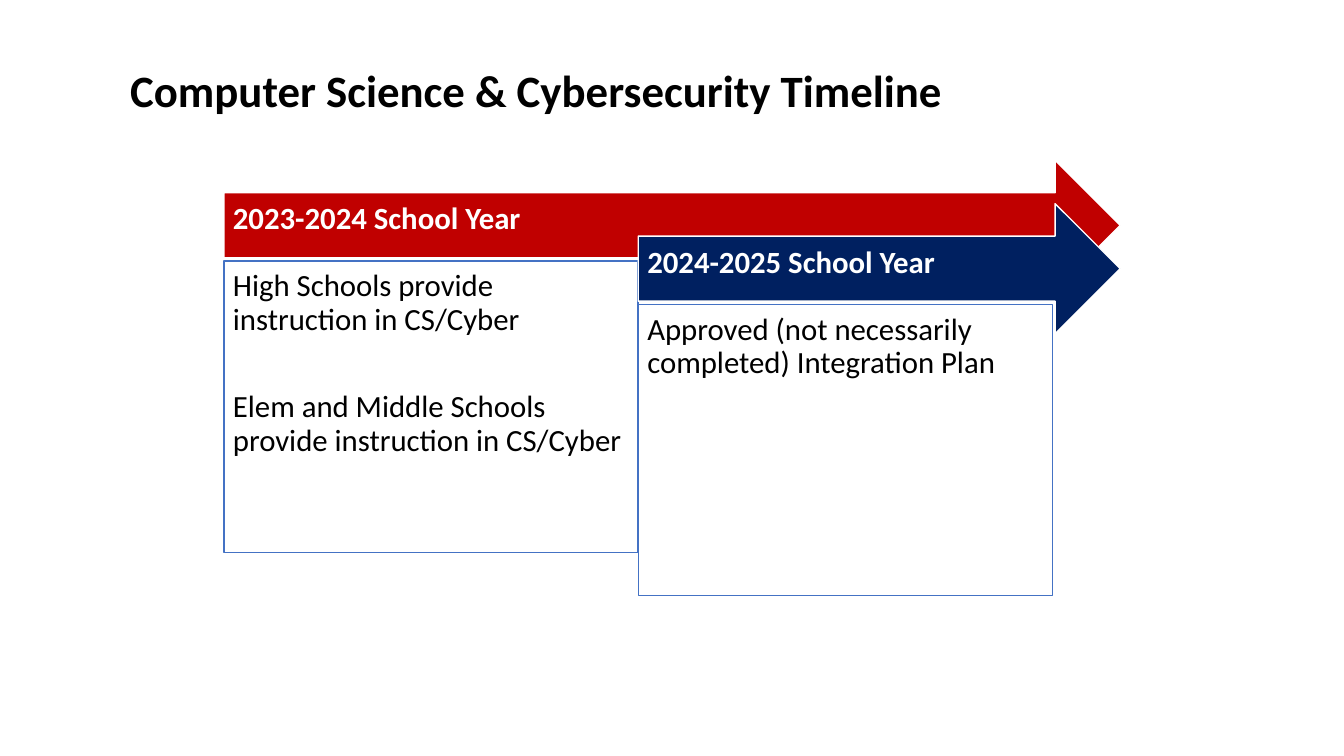
from pptx import Presentation
from pptx.dml.color import RGBColor
from pptx.enum.shapes import MSO_SHAPE
from pptx.enum.text import MSO_ANCHOR, MSO_AUTO_SIZE, PP_ALIGN
from pptx.util import Pt

BLACK = RGBColor(0x00, 0x00, 0x00)
WHITE = RGBColor(0xFF, 0xFF, 0xFF)
RED = RGBColor(0xC0, 0x00, 0x00)
NAVY = RGBColor(0x00, 0x20, 0x60)
BLUE = RGBColor(0x44, 0x72, 0xC4)

TITLE = "Computer Science & Cybersecurity Timeline"
YEARS = [
    ("2023-2024 School Year", RED,
     ["High Schools provide instruction in CS/Cyber",
      "Elem and Middle Schools provide instruction in CS/Cyber"]),
    ("2024-2025 School Year", NAVY,
     ["Approved (not necessarily completed) Integration Plan"]),
]

PX = 9144  # 100 px to the inch
LEFT, TOP, ARROW_TIP = 222, 159, 1111
STEP_X, STEP_Y = 411, 43
ARROW_HEIGHT = 129
BODY_DROP, BODY_HEIGHT = 100, 289


def write(shape, paragraphs, size=22, color=BLACK, bold=False, align=PP_ALIGN.LEFT,
          anchor=MSO_ANCHOR.TOP, insets=(9, 9, 9, 9), gap=39):
    """Fill a shape with text; insets are left, top, right, bottom in px."""
    frame = shape.text_frame
    frame.word_wrap = True
    frame.auto_size = MSO_AUTO_SIZE.NONE
    frame.vertical_anchor = anchor
    (frame.margin_left, frame.margin_top,
     frame.margin_right, frame.margin_bottom) = [inset * PX for inset in insets]
    for index, text in enumerate(paragraphs):
        para = frame.add_paragraph() if index else frame.paragraphs[0]
        para.alignment = align
        para.line_spacing = 0.9
        para.space_before = Pt(gap if index else 0)
        span = para.add_run()
        span.text = text
        span.font.name = "Calibri"
        span.font.size = Pt(size)
        span.font.bold = bold
        span.font.color.rgb = color


def add_block(page, kind, left, top, width, height, fill, line):
    shape = page.shapes.add_shape(kind, left * PX, top * PX, width * PX, height * PX)
    shape.shadow.inherit = False
    shape.fill.solid()
    shape.fill.fore_color.rgb = fill
    shape.line.color.rgb = line
    shape.line.width = Pt(1)
    return shape


def main():
    deck = Presentation()
    deck.slide_width, deck.slide_height = 1333 * PX, 750 * PX
    page = deck.slides.add_slide(deck.slide_layouts[5])

    title = page.shapes.title
    title.left, title.top, title.width, title.height = 32 * PX, 51 * PX, 1000 * PX, 70 * PX
    write(title, [TITLE], size=32, bold=True, align=PP_ALIGN.CENTER,
          anchor=MSO_ANCHOR.BOTTOM, insets=(10, 5, 10, 5))

    for index, (year, color, goals) in enumerate(YEARS):
        left, top = LEFT + index * STEP_X, TOP + index * STEP_Y
        arrow = add_block(page, MSO_SHAPE.RIGHT_ARROW, left, top,
                          ARROW_TIP - left, ARROW_HEIGHT, color, WHITE)
        write(arrow, [year], color=WHITE, bold=True,
              anchor=MSO_ANCHOR.MIDDLE, insets=(9, 10, 9, 21))
        body = add_block(page, MSO_SHAPE.RECTANGLE, left, top + BODY_DROP,
                         STEP_X, BODY_HEIGHT, WHITE, BLUE)
        write(body, goals)

    deck.save("out.pptx")


if __name__ == "__main__":
    main()
